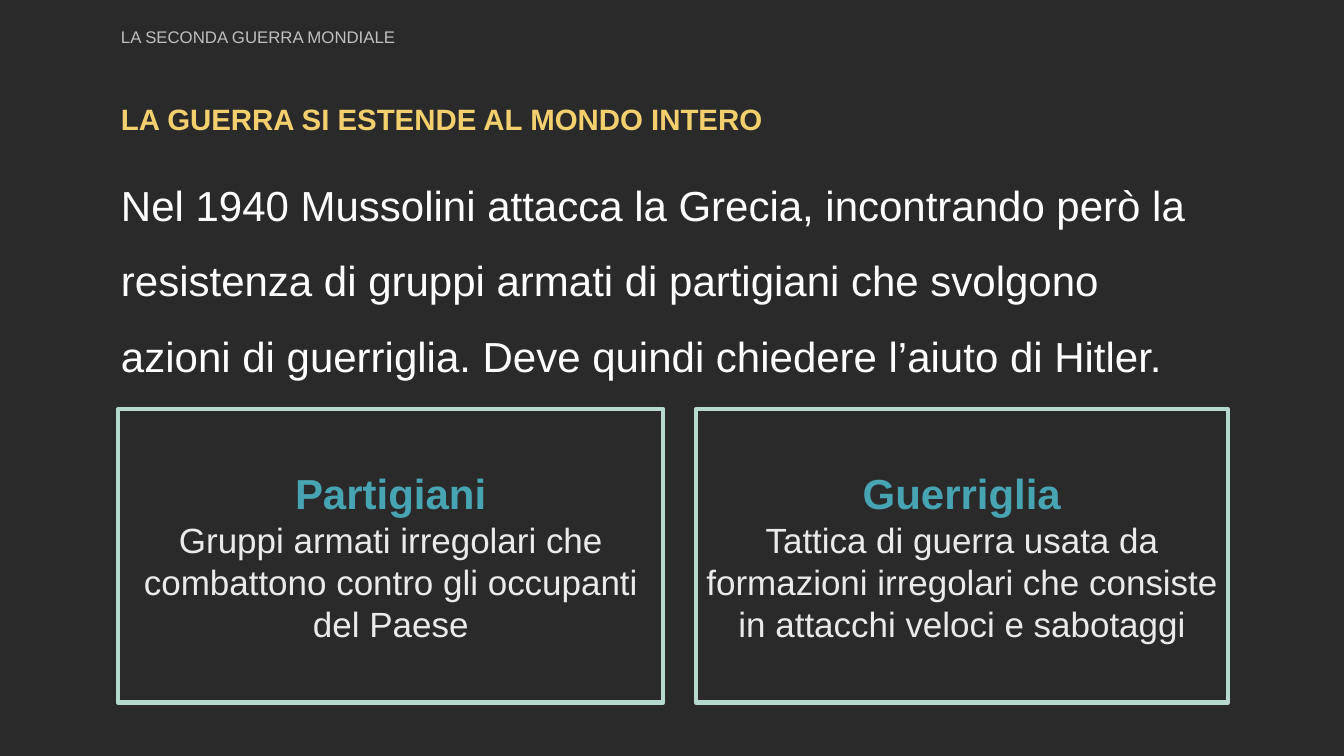
import pptx
import pptx.util
from dataclasses import dataclass
from pptx.dml.color import RGBColor
from pptx.enum.shapes import MSO_SHAPE
from pptx.enum.text import MSO_ANCHOR, MSO_AUTO_SIZE, PP_ALIGN
from pptx.util import Inches


@dataclass(frozen=True)
class Theme:
    font: str = "Arial"
    background: str = "2A2A2A"
    running_head: str = "BFBFBF"
    heading: str = "F3CF6D"
    body: str = "FFFFFF"
    term: str = "47A4B3"
    definition: str = "EAEAEA"
    border: str = "B6D9CF"
    running_head_size: int = 12
    heading_size: int = 21
    body_size: int = 30
    term_size: int = 30
    definition_size: int = 25
    border_width: int = 3


THEME = Theme()
LEFT = 1.15
CARD_TOP, CARD_HEIGHT = 4.06, 2.91


def prepare_frame(sp, anchor):
    tf = sp.text_frame
    tf.word_wrap = True
    tf.auto_size = MSO_AUTO_SIZE.NONE
    tf.vertical_anchor = anchor
    tf.margin_left = tf.margin_right = Inches(0.05)
    tf.margin_top = tf.margin_bottom = Inches(0.05)
    return tf


def write(p, text, size, color, bold=False, align=PP_ALIGN.LEFT, spacing=1.0):
    p.text = text
    p.alignment = align
    p.line_spacing = spacing
    p.font.name = THEME.font
    p.font.size = pptx.util.Pt(size)
    p.font.bold = bold
    p.font.color.rgb = RGBColor.from_string(color)


def add_heading(s, text):
    sp = s.shapes.title
    sp.left, sp.top = Inches(LEFT), Inches(0.99)
    sp.width, sp.height = Inches(11.02), Inches(0.42)
    tf = prepare_frame(sp, MSO_ANCHOR.MIDDLE)
    write(tf.paragraphs[0], text, THEME.heading_size, THEME.heading,
          bold=True, spacing=0.9)


def add_text(s, text, top, width, height, size, color,
             anchor=MSO_ANCHOR.TOP, spacing=1.0):
    sp = s.shapes.add_textbox(Inches(LEFT), Inches(top),
                              Inches(width), Inches(height))
    tf = prepare_frame(sp, anchor)
    write(tf.paragraphs[0], text, size, color, spacing=spacing)


def add_card(s, left, width, term, definition):
    sp = s.shapes.add_shape(MSO_SHAPE.RECTANGLE, Inches(left), Inches(CARD_TOP),
                            Inches(width), Inches(CARD_HEIGHT))
    sp.shadow.inherit = False
    sp.fill.background()
    sp.line.color.rgb = RGBColor.from_string(THEME.border)
    sp.line.width = pptx.util.Pt(THEME.border_width)
    tf = prepare_frame(sp, MSO_ANCHOR.MIDDLE)
    write(tf.paragraphs[0], term, THEME.term_size, THEME.term,
          bold=True, align=PP_ALIGN.CENTER)
    write(tf.add_paragraph(), definition, THEME.definition_size,
          THEME.definition, align=PP_ALIGN.CENTER)


def main():
    prs = pptx.Presentation()
    prs.slide_width, prs.slide_height = Inches(13.33), Inches(7.5)
    s = prs.slides.add_slide(prs.slide_layouts.get_by_name("Title Only"))
    s.background.fill.solid()
    s.background.fill.fore_color.rgb = RGBColor.from_string(THEME.background)

    # Running head, heading and main text
    add_text(s, "LA SECONDA GUERRA MONDIALE", 0.22, 7.09, 0.3,
             THEME.running_head_size, THEME.running_head, MSO_ANCHOR.MIDDLE)
    add_heading(s, "LA GUERRA SI ESTENDE AL MONDO INTERO")
    add_text(s, "Nel 1940 Mussolini attacca la Grecia, incontrando però la "
             "resistenza di gruppi armati di partigiani che svolgono azioni di "
             "guerriglia. Deve quindi chiedere l’aiuto di Hitler.",
             1.48, 10.71, 4.14, THEME.body_size, THEME.body, spacing=1.5)

    # Definition cards
    add_card(s, 1.17, 5.41, "Partigiani",
             "Gruppi armati irregolari che combattono contro gli occupanti "
             "del Paese")
    add_card(s, 6.9, 5.28, "Guerriglia",
             "Tattica di guerra usata da formazioni irregolari che consiste "
             "in attacchi veloci e sabotaggi")

    prs.save("out.pptx")


if __name__ == "__main__":
    main()
